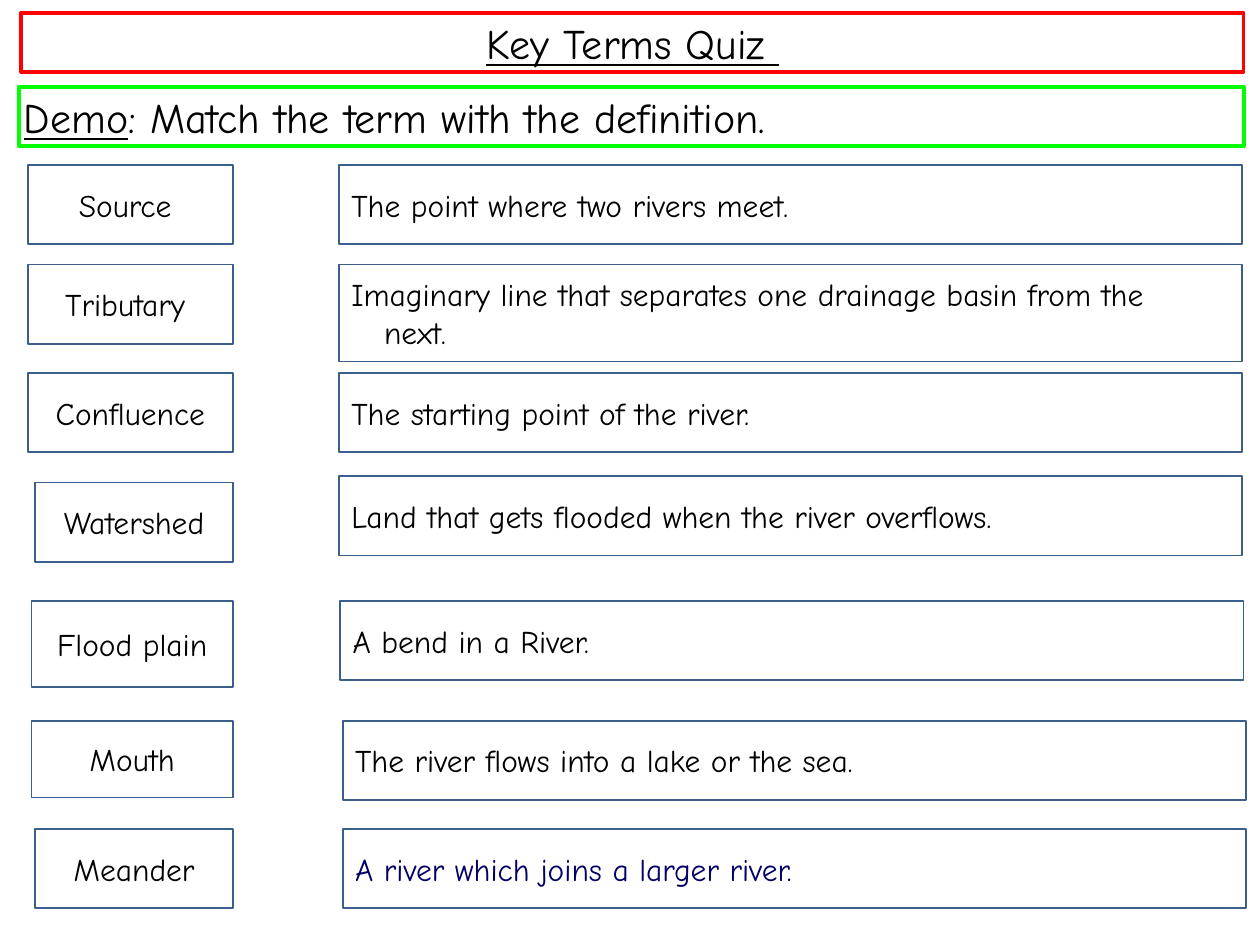
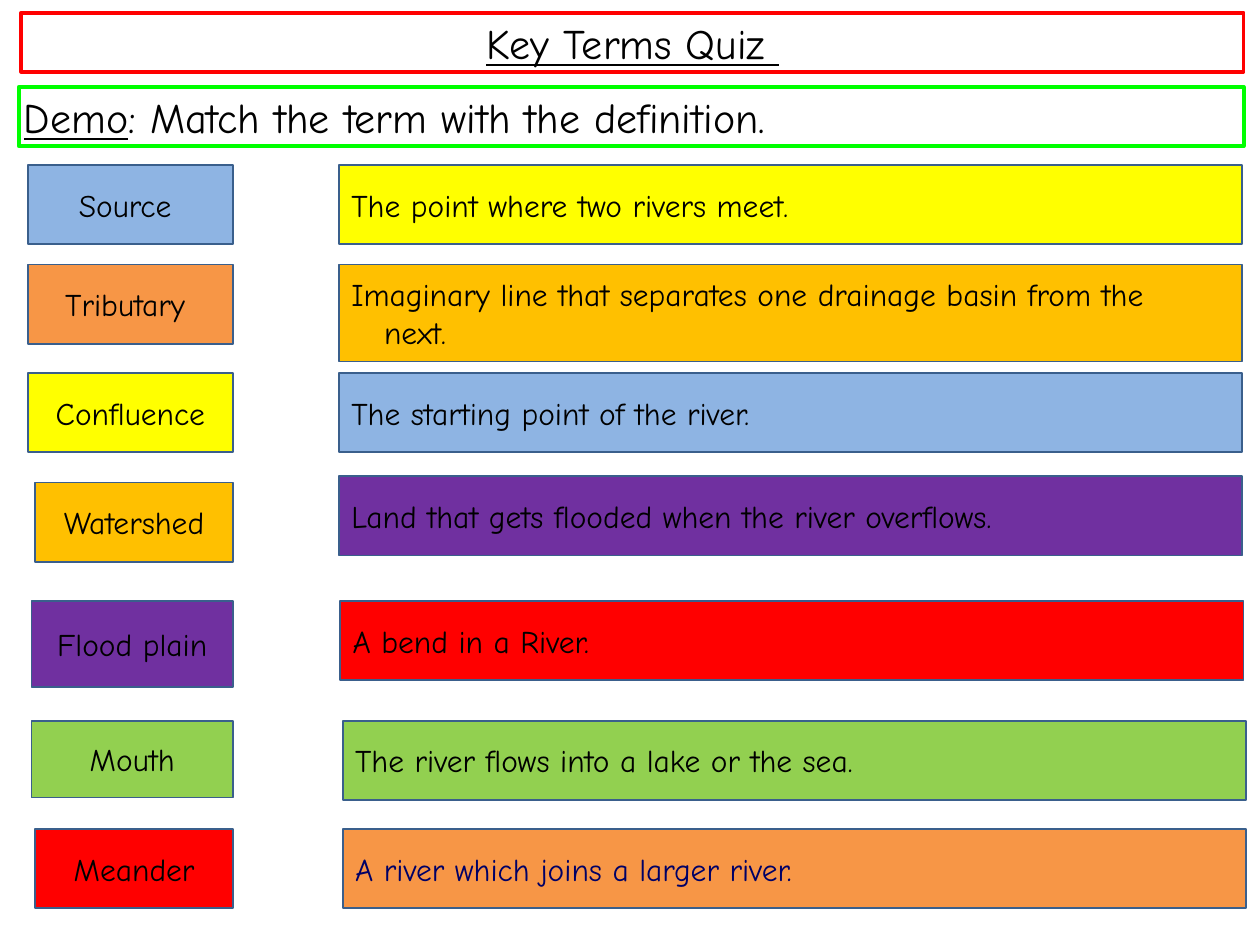
from pptx import Presentation
from pptx.dml.color import RGBColor
from pptx.enum.shapes import MSO_SHAPE
from pptx.enum.text import MSO_ANCHOR, PP_ALIGN
from pptx.util import Inches, Pt

FONT = "Comic Neue"
BLACK = RGBColor(0x00, 0x00, 0x00)
WHITE = RGBColor(0xFF, 0xFF, 0xFF)
NAVY = RGBColor(0x00, 0x00, 0x66)
EDGE = RGBColor(0x3A, 0x5F, 0x8C)
RED = RGBColor(0xFF, 0x00, 0x00)
LIME = RGBColor(0x00, 0xFF, 0x00)
BLUE = RGBColor(0x8E, 0xB4, 0xE3)
ORANGE = RGBColor(0xF7, 0x96, 0x46)
YELLOW = RGBColor(0xFF, 0xFF, 0x00)
GOLD = RGBColor(0xFF, 0xC0, 0x00)
PURPLE = RGBColor(0x70, 0x30, 0xA0)
GREEN = RGBColor(0x92, 0xD0, 0x50)

# Content: runs are (text, underlined)
TITLE = [("Key Terms Quiz ", True)]
TASK = [("Demo", True), (": Match the term with the definition.", False)]

# Term, left, top, height, answer colour
TERMS = [
    ("Source ", 0.22, 1.31, 0.63, BLUE),
    ("Tributary ", 0.22, 2.10, 0.63, ORANGE),
    ("Confluence", 0.22, 2.96, 0.63, YELLOW),
    ("Watershed", 0.28, 3.83, 0.63, GOLD),
    ("Flood plain", 0.25, 4.77, 0.68, PURPLE),
    ("Mouth", 0.25, 5.72, 0.61, GREEN),
    ("Meander", 0.28, 6.58, 0.63, RED),
]
# Definition lines, left, top, height, matching term, text colour
DEFINITIONS = [
    (["The point where two rivers meet."], 2.69, 1.31, 0.63, "Confluence", BLACK),
    (["Imaginary line that separates one drainage basin from the", "next."],
     2.69, 2.10, 0.77, "Watershed", BLACK),
    (["The starting point of the river."], 2.69, 2.96, 0.63, "Source", BLACK),
    (["Land that gets flooded when the river overflows."],
     2.69, 3.78, 0.63, "Flood plain", BLACK),
    (["A bend in a River."], 2.70, 4.77, 0.63, "Meander", BLACK),
    (["The river flows into a lake or the sea."], 2.72, 5.72, 0.63, "Mouth", BLACK),
    (["A river which joins a larger river."], 2.72, 6.58, 0.63, "Tributary", NAVY),
]
TERM_RIGHT = 1.85
DEFINITION_W = 7.17
HANGING = Inches(0.26)
ANSWERS = {term.strip(): colour for term, *_, colour in TERMS}


def add_box(s, x, y, w, h, fill, line, weight, align):
    sp = s.shapes.add_shape(MSO_SHAPE.RECTANGLE, *map(Inches, (x, y, w, h)))
    sp.shadow.inherit = False
    sp.fill.solid()
    sp.fill.fore_color.rgb = fill
    sp.line.color.rgb = line
    sp.line.width = Pt(weight)
    tf = sp.text_frame
    tf.word_wrap = True
    tf.vertical_anchor = MSO_ANCHOR.MIDDLE
    tf.paragraphs[0].alignment = align
    return tf


def add_run(p, text, size=18, colour=BLACK, underline=False):
    r = p.add_run()
    r.text = text
    r.font.name = FONT
    r.font.size = Pt(size)
    r.font.color.rgb = colour
    r.font.underline = underline


def add_band(s, x, y, w, line, align, runs):
    tf = add_box(s, x, y, w, 0.47, WHITE, line, 2.25, align)
    tf.vertical_anchor = MSO_ANCHOR.TOP
    tf.margin_left = tf.margin_right = Inches(0.04)
    tf.margin_top = tf.margin_bottom = Inches(0.04)
    for text, underline in runs:
        add_run(tf.paragraphs[0], text, 24, underline=underline)


def add_quiz(prs, show_answers):
    s = prs.slides.add_slide(prs.slide_layouts[6])
    add_band(s, 0.17, 0.10, 9.70, RED, PP_ALIGN.CENTER, TITLE)
    add_band(s, 0.15, 0.69, 9.72, LIME, PP_ALIGN.LEFT, TASK)

    # Terms on the left
    for term, x, y, h, colour in TERMS:
        fill = colour if show_answers else WHITE
        tf = add_box(s, x, y, TERM_RIGHT - x, h, fill, EDGE, 1, PP_ALIGN.CENTER)
        add_run(tf.paragraphs[0], term)

    # Definitions on the right, coloured like the term they explain
    for lines, x, y, h, term, colour in DEFINITIONS:
        fill = ANSWERS[term] if show_answers else WHITE
        tf = add_box(s, x, y, DEFINITION_W, h, fill, EDGE, 1, PP_ALIGN.LEFT)
        p = tf.paragraphs[0]
        for i, line in enumerate(lines):
            if i:
                p.add_line_break()
                pPr = p._p.get_or_add_pPr()
                pPr.set("marL", str(HANGING))
                pPr.set("indent", str(-HANGING))
            add_run(p, line, colour=colour)


def main():
    prs = Presentation()
    prs.slide_width, prs.slide_height = Inches(10), Inches(7.5)
    for show_answers in (False, True):
        add_quiz(prs, show_answers)
    prs.save("out.pptx")


if __name__ == "__main__":
    main()
